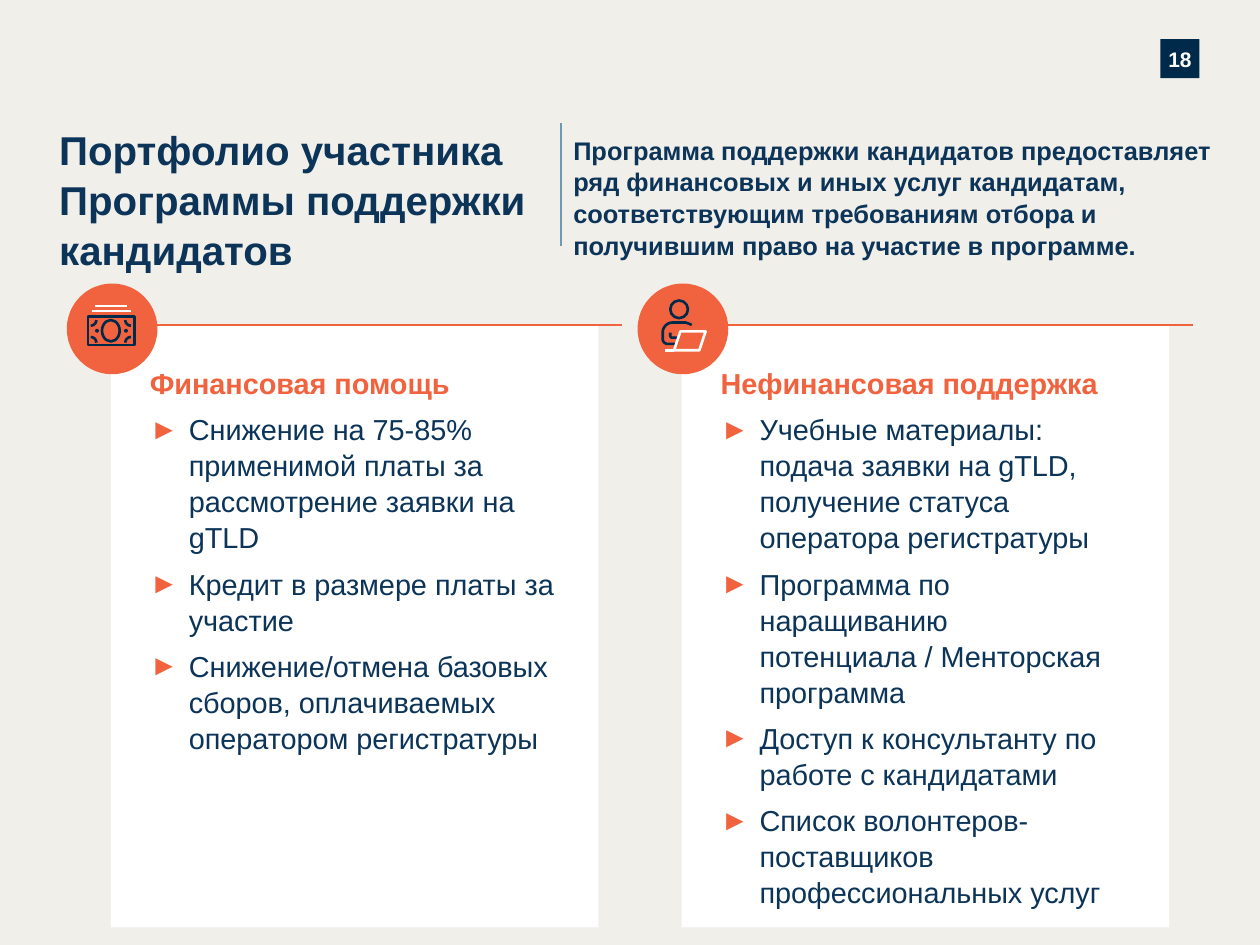
from dataclasses import dataclass
from math import cos, radians, sin

from lxml import etree
from pptx import Presentation
from pptx import util as u
from pptx.dml.color import RGBColor
from pptx.enum import shapes, text
from pptx.oxml import ns

BACKGROUND = RGBColor(0xF1, 0xEF, 0xEA)
INK = RGBColor(0x0B, 0x34, 0x58)
DARK = RGBColor(0x00, 0x2A, 0x49)
ORANGE = RGBColor(0xF1, 0x63, 0x3E)
BLUE = RGBColor(0x6D, 0x99, 0xB3)
WHITE = RGBColor(0xFF, 0xFF, 0xFF)
LINE_SPACING = 1.04
CARD_TOP = 2.58

Point = tuple[float, float]


@dataclass(frozen=True)
class Card:
    left: float
    right_inset: float
    heading: str
    items: tuple[str, ...]


@dataclass(frozen=True)
class Stroke:
    points: tuple[Point, ...]
    color: RGBColor = DARK
    closed: bool = False


@dataclass(frozen=True)
class Ring:
    center: Point
    width: float
    height: float


def arc(center: Point, radius: float, start: int, end: int) -> tuple[Point, ...]:
    """Return points along an arc, with angles clockwise from the right."""
    angles = [radians(start + (end - start) * step / 8) for step in range(9)]
    return tuple((center[0] + radius * cos(a), center[1] + radius * sin(a)) for a in angles)


CARDS = (
    Card(0.88, 0.24, "Финансовая помощь", (
        "Снижение на 75-85% применимой платы за рассмотрение заявки на gTLD",
        "Кредит в размере платы за участие",
        "Снижение/отмена базовых сборов, оплачиваемых оператором регистратуры",
    )),
    Card(5.41, 0.35, "Нефинансовая поддержка", (
        "Учебные материалы: подача заявки на gTLD, получение статуса оператора регистратуры",
        "Программа по наращиванию потенциала / Менторская программа",
        "Доступ к консультанту по работе с кандидатами",
        "Список волонтеров-поставщиков профессиональных услуг",
    )),
)
NOTE_CORNERS = (((0.72, 2.54), 0), ((1.04, 2.54), 90), ((1.04, 2.72), 180), ((0.72, 2.72), 270))
RINGS = (
    Ring((5.39, 2.455), 0.14, 0.14),
    Ring((0.88, 2.625), 0.14, 0.17),
    Ring((0.77, 2.625), 0.01, 0.01),
    Ring((1.0, 2.625), 0.01, 0.01),
)
STROKES = (
    Stroke(((5.38, 2.68), (5.33, 2.68), (5.32, 2.67), (5.32, 2.64))),
    Stroke(((5.49, 2.58), (5.47, 2.57), (5.44, 2.56))
           + arc((5.34, 2.64), 0.08, 270, 180)
           + arc((5.3, 2.69), 0.04, 180, 90) + ((5.37, 2.73),)),
    Stroke(((5.35, 2.78), (5.28, 2.78)), WHITE),
    Stroke(((5.4, 2.63), (5.35, 2.78), (5.55, 2.78), (5.6, 2.63)), WHITE, True),
    Stroke(((0.7, 2.51), (1.07, 2.51), (1.07, 2.74), (0.7, 2.74)), closed=True),
    *(Stroke(arc(corner, 0.045, angle, angle + 90)) for corner, angle in NOTE_CORNERS),
    Stroke(((0.73, 2.47), (1.04, 2.47)), WHITE),
    Stroke(((0.75, 2.43), (1.01, 2.43)), WHITE),
)


def set_insets(frame, left: float = 0, top: float = 0, right: float = 0, bottom: float = 0) -> None:
    """Set the inner margins of a wrapped text frame in inches."""
    frame.word_wrap = True
    frame.margin_left, frame.margin_top = u.Inches(left), u.Inches(top)
    frame.margin_right, frame.margin_bottom = u.Inches(right), u.Inches(bottom)


def style(para, size: float, color: RGBColor, bold: bool = True) -> None:
    """Format every run of a paragraph."""
    para.line_spacing = LINE_SPACING
    for span in para.runs:
        span.font.name = "Arial"
        span.font.size = u.Pt(size)
        span.font.bold = bold
        span.font.color.rgb = color


def add_bullet(para) -> None:
    """Give a paragraph a hanging orange arrow bullet."""
    props = para._p.get_or_add_pPr()
    props.set("marL", str(u.Inches(0.31)))
    props.set("indent", str(-u.Inches(0.31)))
    color = etree.SubElement(props, ns.qn("a:buClr"))
    etree.SubElement(color, ns.qn("a:srgbClr"), val=str(ORANGE))
    etree.SubElement(props, ns.qn("a:buFont"), typeface="Arial")
    etree.SubElement(props, ns.qn("a:buChar"), char="►")


def add_solid(page, kind, left: float, top: float, width: float, height: float, color: RGBColor):
    """Draw a filled shape without outline or shadow."""
    box = page.shapes.add_shape(
        kind, u.Inches(left), u.Inches(top), u.Inches(width), u.Inches(height))
    box.shadow.inherit = False
    box.fill.solid()
    box.fill.fore_color.rgb = color
    box.line.fill.background()
    return box


def add_line(page, start: Point, end: Point, color: RGBColor, weight: float = 1.25) -> None:
    """Draw a straight line without shadow."""
    line = page.shapes.add_connector(
        shapes.MSO_CONNECTOR.STRAIGHT, *map(u.Inches, start), *map(u.Inches, end))
    line.line.color.rgb = color
    line.line.width = u.Pt(weight)
    etree.SubElement(line._element.spPr, ns.qn("a:effectLst"))


def add_label(page, left: float, top: float, width: float, height: float,
              words: str, size: float):
    """Add a bold wrapped text box without margins."""
    box = page.shapes.add_textbox(
        u.Inches(left), u.Inches(top), u.Inches(width), u.Inches(height))
    set_insets(box.text_frame)
    box.text_frame.text = words
    style(box.text_frame.paragraphs[0], size, INK)
    return box


def add_card(page, card: Card) -> None:
    """Draw a white card with its heading, bullets, top rule and icon disc."""
    box = add_solid(page, shapes.MSO_SHAPE.RECTANGLE, card.left, CARD_TOP, 3.87, 4.78, WHITE)
    frame = box.text_frame
    set_insets(frame, 0.31, 0.31, card.right_inset, 0.3)
    frame.vertical_anchor = text.MSO_ANCHOR.TOP
    frame.text = card.heading
    frame.paragraphs[0].alignment = text.PP_ALIGN.LEFT
    style(frame.paragraphs[0], 16.5, ORANGE)
    for item in card.items:
        para = frame.add_paragraph()
        para.text = item
        para.alignment = text.PP_ALIGN.LEFT
        add_bullet(para)
        para.space_before = u.Pt(6)
        style(para, 16.5, INK, False)
    add_line(page, (card.left, CARD_TOP), (card.left + 4.06, CARD_TOP), ORANGE)
    add_solid(page, shapes.MSO_SHAPE.OVAL, card.left - 0.35, 2.25, 0.72, 0.72, ORANGE)


def add_ring(page, ring: Ring) -> None:
    """Draw an unfilled dark ellipse around its centre."""
    oval = add_solid(page, shapes.MSO_SHAPE.OVAL, ring.center[0] - ring.width / 2,
                     ring.center[1] - ring.height / 2, ring.width, ring.height, DARK)
    oval.fill.background()
    oval.line.color.rgb = DARK
    oval.line.width = u.Pt(1.5)


def add_stroke(page, stroke: Stroke) -> None:
    """Draw an icon stroke as a line or an unfilled outline."""
    if len(stroke.points) == 2:
        add_line(page, *stroke.points, stroke.color, 1.5)
        return
    start, *rest = [(u.Inches(x), u.Inches(y)) for x, y in stroke.points]
    builder = page.shapes.build_freeform(*start)
    builder.add_line_segments(rest, close=stroke.closed)
    outline = builder.convert_to_shape()
    outline.shadow.inherit = False
    outline.fill.background()
    outline.line.color.rgb = stroke.color
    outline.line.width = u.Pt(1.5)


def main() -> None:
    """Build the slide and save the deck."""
    deck = Presentation()
    deck.slide_width, deck.slide_height = u.Inches(10), u.Inches(7.5)
    page = deck.slides.add_slide(deck.slide_layouts[6])
    page.background.fill.solid()
    page.background.fill.fore_color.rgb = BACKGROUND
    badge = add_solid(page, shapes.MSO_SHAPE.RECTANGLE, 9.21, 0.31, 0.31, 0.31, DARK)
    set_insets(badge.text_frame)
    badge.text_frame.vertical_anchor = text.MSO_ANCHOR.MIDDLE
    badge.text_frame.text = "18"
    badge.text_frame.paragraphs[0].alignment = text.PP_ALIGN.CENTER
    style(badge.text_frame.paragraphs[0], 12, WHITE)
    for card in reversed(CARDS):
        add_card(page, card)
    add_label(page, 0.47, 0.98, 3.87, 0.92,
              "Портфолио участника Программы поддержки кандидатов", 23)
    summary = add_label(
        page, 4.55, 1.06, 5.17, 0.98,
        "Программа поддержки кандидатов предоставляет ряд финансовых и иных услуг кандидатам, "
        "соответствующим требованиям отбора и получившим право на участие в программе.", 14.5)
    summary.text_frame.auto_size = text.MSO_AUTO_SIZE.SHAPE_TO_FIT_TEXT
    add_line(page, (4.45, 0.98), (4.45, 1.95), BLUE)
    for ring in RINGS:
        add_ring(page, ring)
    for stroke in STROKES:
        add_stroke(page, stroke)
    deck.save("out.pptx")


if __name__ == "__main__":
    main()
